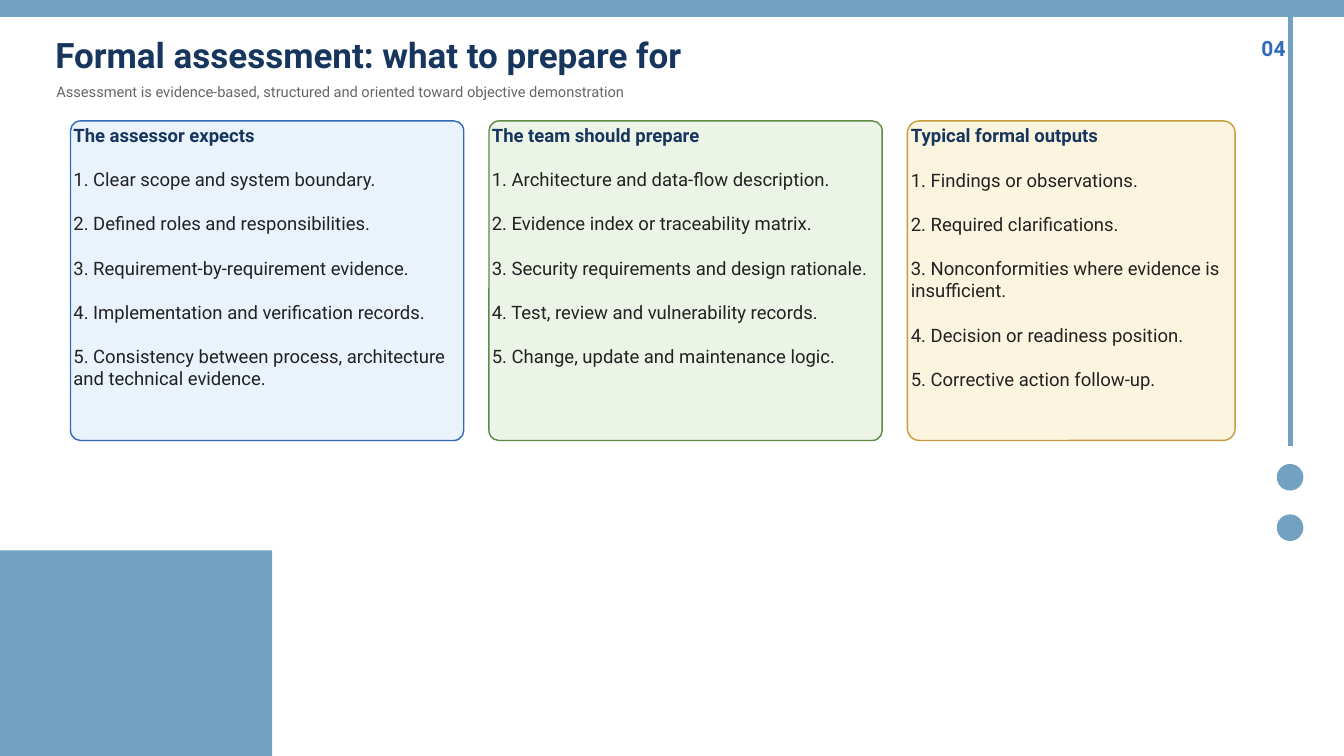
from pptx import Presentation
from pptx.dml.color import RGBColor
from pptx.enum.shapes import MSO_CONNECTOR as Connector, MSO_SHAPE as Shape
from pptx.enum.text import MSO_ANCHOR as Anchor, PP_ALIGN as Align
from pptx.oxml.ns import qn
from pptx.util import Emu, Pt
from lxml.etree import SubElement

STEEL = RGBColor(0x73, 0xA1, 0xC1)
NAVY = RGBColor(0x17, 0x36, 0x5D)
BLUE = RGBColor(0x2F, 0x6B, 0xBA)
GREEN = RGBColor(0x5C, 0x8A, 0x47)
GOLD = RGBColor(0xC6, 0x9C, 0x3F)
PALE_BLUE = RGBColor(0xEA, 0xF2, 0xFC)
PALE_GREEN = RGBColor(0xEC, 0xF4, 0xE8)
PALE_GOLD = RGBColor(0xFB, 0xF4, 0xDE)
GREY = RGBColor(0x66, 0x66, 0x66)
INK = RGBColor(0x22, 0x22, 0x22)

PX = 9144
WIDTH, HEIGHT = 1333, 750
CARD_LEFT, CARD_TOP, CARD_HEIGHT, CARD_GAP = 70, 120, 317, 25
CARD_RADIUS = 12

TITLE = {"size": Pt(25), "bold": True, "color": NAVY}
SUBTITLE = {"size": Pt(10.5), "bold": False, "color": GREY}
NUMBER = {"size": Pt(15), "bold": True, "color": BLUE}
HEADING = {"size": Pt(13.2), "bold": True, "color": NAVY}
ITEM = {"size": Pt(13.2), "bold": False, "color": INK}

CARDS = [
    (390, PALE_BLUE, BLUE, "The assessor expects", [
        "Clear scope and system boundary.",
        "Defined roles and responsibilities.",
        "Requirement-by-requirement evidence.",
        "Implementation and verification records.",
        "Consistency between process, architecture and technical evidence.",
    ]),
    (390, PALE_GREEN, GREEN, "The team should prepare", [
        "Architecture and data-flow description.",
        "Evidence index or traceability matrix.",
        "Security requirements and design rationale.",
        "Test, review and vulnerability records.",
        "Change, update and maintenance logic.",
    ]),
    (325, PALE_GOLD, GOLD, "Typical formal outputs", [
        "Findings or observations.",
        "Required clarifications.",
        "Nonconformities where evidence is insufficient.",
        "Decision or readiness position.",
        "Corrective action follow-up.",
    ]),
]


class SlideBuilder:
    """Draws styled elements on one slide, with lengths in px."""

    def __init__(self, slide, font_name):
        self.slide = slide
        self.font_name = font_name

    def px(self, *lengths):
        return [Emu(length * PX) for length in lengths]

    def shape(self, kind, box, fill, line=None):
        shape = self.slide.shapes.add_shape(kind, *self.px(*box))
        shape.shadow.inherit = False
        shape.fill.solid()
        shape.fill.fore_color.rgb = fill
        if line is None:
            shape.line.fill.background()
        else:
            shape.line.color.rgb = line
            shape.line.width = Pt(1)
        return shape

    def line(self, start, end, color, width):
        connector = self.slide.shapes.add_connector(
            Connector.STRAIGHT, *self.px(*start, *end))
        connector.line.color.rgb = color
        connector.line.width = Pt(width)
        SubElement(connector.element.spPr, qn("a:effectLst"))

    def frame(self, shape, anchor):
        frame = shape.text_frame
        settings = {"word_wrap": True, "vertical_anchor": anchor,
                    "margin_left": 0, "margin_top": 0,
                    "margin_right": 0, "margin_bottom": 0}
        for name, value in settings.items():
            setattr(frame, name, value)
        return frame

    def add_words(self, paragraph, text, style, align=Align.LEFT):
        paragraph.alignment = align
        run = paragraph.add_run()
        run.text = text
        run.font.name = self.font_name
        for name, value in style.items():
            if name == "color":
                run.font.color.rgb = value
            else:
                setattr(run.font, name, value)

    def text(self, box, text, style, align=Align.LEFT):
        shape = self.slide.shapes.add_textbox(*self.px(*box))
        frame = self.frame(shape, Anchor.MIDDLE)
        self.add_words(frame.paragraphs[0], text, style, align)

    def card(self, left, width, fill, line, heading, items):
        box = (left, CARD_TOP, width, CARD_HEIGHT)
        shape = self.shape(Shape.ROUNDED_RECTANGLE, box, fill, line)
        shape.adjustments[0] = CARD_RADIUS / width
        frame = self.frame(shape, Anchor.TOP)
        self.add_words(frame.paragraphs[0], heading, HEADING)
        for number, item in enumerate(items, 1):
            paragraph = frame.add_paragraph()
            paragraph.space_before = Pt(15.8)
            self.add_words(paragraph, f"{number}. {item}", ITEM)


def main():
    presentation = Presentation()
    presentation.slide_width = Emu(WIDTH * PX)
    presentation.slide_height = Emu(HEIGHT * PX)
    slide = presentation.slides.add_slide(presentation.slide_layouts[6])
    builder = SlideBuilder(slide, "Roboto")

    builder.shape(Shape.RECTANGLE, (0, 546, 270, 204), STEEL)
    builder.line((1280, 442), (1280, 0), STEEL, 3)
    for top in (461, 511):
        builder.shape(Shape.OVAL, (1267, top, 25, 25), STEEL, STEEL)
    builder.shape(Shape.RECTANGLE, (0, 0, WIDTH, 16), STEEL, STEEL)

    builder.text((55, 33, 1070, 42),
                 "Formal assessment: what to prepare for", TITLE)
    builder.text((56, 78, 1060, 26),
                 "Assessment is evidence-based, structured and oriented "
                 "toward objective demonstration", SUBTITLE)
    builder.text((1220, 33, 55, 30), "04", NUMBER, Align.RIGHT)

    left = CARD_LEFT
    for width, fill, line, heading, items in CARDS:
        builder.card(left, width, fill, line, heading, items)
        left += width + CARD_GAP

    presentation.save("out.pptx")


if __name__ == "__main__":
    main()
